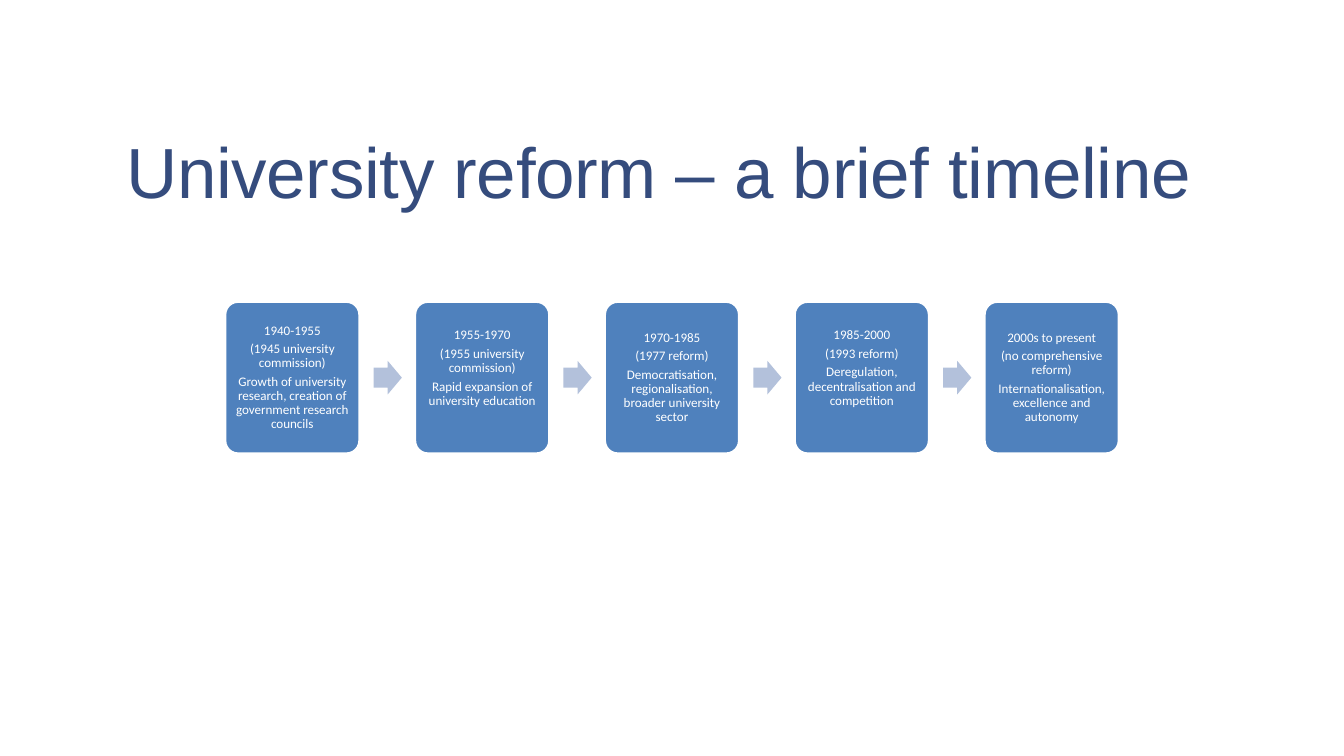
from dataclasses import dataclass

from pptx import Presentation
from pptx.dml.color import RGBColor
from pptx.enum.shapes import MSO_SHAPE as Shape
from pptx.enum.text import MSO_ANCHOR as Anchor, PP_ALIGN as Align
from pptx.util import Inches, Pt

COLORS = {"title": "354C7D", "card": "4F81BD", "arrow": "B3C1DB", "white": "FFFFFF"}

# Timeline grid, in inches: the first and last cards fix the column pitch
FIRST_LEFT, LAST_LEFT = 1.67, 7.32
CARD_TOP, CARD_W, CARD_H = 2.24, 1.01, 1.14
ARROW_W, ARROW_H, ARROW_GAP = 0.21, 0.25, 0.1
INSET = 0.03


@dataclass
class Period:
    years: str
    reform: str
    outcome: str
    lift: float = 0  # extra bottom inset that raises the text


PERIODS = [
    Period("1940-1955", "(1945 university commission)",
           "Growth of university research, creation of government research councils"),
    Period("1955-1970", "(1955 university commission)",
           "Rapid expansion of university education", lift=0.14),
    Period("1970-1985", "(1977 reform)",
           "Democratisation, regionalisation, broader university sector"),
    Period("1985-2000", "(1993 reform)",
           "Deregulation, decentralisation and competition", lift=0.14),
    Period("2000s to present", "(no comprehensive reform)",
           "Internationalisation, excellence and autonomy"),
]


def rgb(name: str) -> RGBColor:
    return RGBColor.from_string(COLORS[name])


def set_frame(tf, anchor, inset: float = 0, lift: float = 0) -> None:
    tf.word_wrap = True
    tf.vertical_anchor = anchor
    tf.margin_left = tf.margin_right = tf.margin_top = Inches(inset)
    tf.margin_bottom = Inches(inset + lift)


def set_font(r, name: str, size: float, color: str) -> None:
    r.font.name = name
    r.font.size = Pt(size)
    r.font.color.rgb = rgb(color)


def add_title(slide, text: str) -> None:
    box = slide.shapes.add_textbox(Inches(0.94), Inches(0.54), Inches(8.33), Inches(1.04))
    tf = box.text_frame
    tf.text = text
    set_frame(tf, Anchor.BOTTOM)
    p = tf.paragraphs[0]
    p.line_spacing = Pt(40)
    r = p.runs[0]
    set_font(r, "Arial", 38, "title")
    r.font._element.set("spc", "-20")


def add_block(slide, kind, left: float, top: float, width: float, height: float, fill: str):
    sp = slide.shapes.add_shape(kind, Inches(left), Inches(top), Inches(width), Inches(height))
    sp.shadow.inherit = False
    sp.fill.solid()
    sp.fill.fore_color.rgb = rgb(fill)
    return sp


def add_card(slide, left: float, period: Period) -> None:
    sp = add_block(slide, Shape.ROUNDED_RECTANGLE, left, CARD_TOP, CARD_W, CARD_H, "card")
    sp.adjustments[0] = 0.1
    sp.line.color.rgb = rgb("white")
    sp.line.width = Pt(2)
    tf = sp.text_frame
    tf.text = "\n".join([period.years, period.reform, period.outcome])
    set_frame(tf, Anchor.MIDDLE, INSET, period.lift)
    for p in tf.paragraphs:
        p.alignment = Align.CENTER
        p.line_spacing = 0.9
        p.space_after = Pt(2.45)
        set_font(p.runs[0], "Calibri", 7, "white")


def add_arrow(slide, left: float) -> None:
    top = CARD_TOP + (CARD_H - ARROW_H) / 2
    sp = add_block(slide, Shape.RIGHT_ARROW, left, top, ARROW_W, ARROW_H, "arrow")
    sp.adjustments[0], sp.adjustments[1] = 0.6, 0.5
    sp.line.fill.background()


def main() -> None:
    # Widescreen slide, 16:9
    prs = Presentation()
    prs.slide_width = Inches(10)
    prs.slide_height = prs.slide_width * 9 // 16
    slide = prs.slides.add_slide(prs.slide_layouts[6])

    add_title(slide, "University reform – a brief timeline")

    # Cards, with an arrow after each but the last
    pitch = (LAST_LEFT - FIRST_LEFT) / (len(PERIODS) - 1)
    for i, period in enumerate(PERIODS):
        left = FIRST_LEFT + i * pitch
        add_card(slide, left, period)
        if i < len(PERIODS) - 1:
            add_arrow(slide, left + CARD_W + ARROW_GAP)

    prs.save("out.pptx")


if __name__ == "__main__":
    main()
